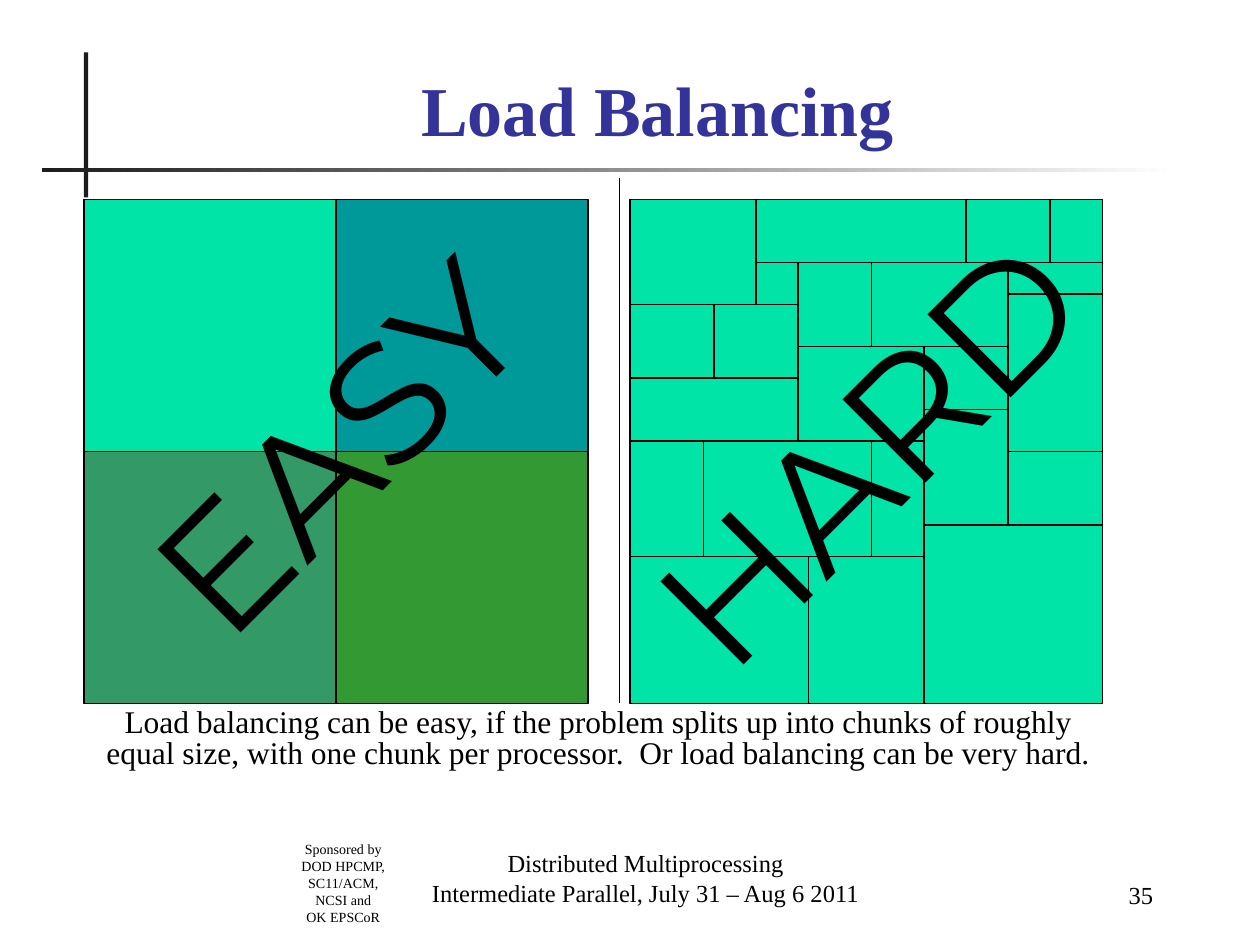
from lxml import etree
from pptx import Presentation
from pptx import util as u
from pptx.dml.color import RGBColor
from pptx.enum import shapes, text
from pptx.oxml.ns import qn

# All lengths are in cells of a grid with 12 cells to the inch.
COLUMNS, ROWS = 120, 90
CELL = u.Inches(1) / 12

COLORS = {
    "black": "000000", "white": "FFFFFF", "rule": "1C1C1C", "title": "333399",
    "mint": "00E4A8", "teal": "009999", "sea": "339966", "green": "339933",
}
SERIF, SANS = "Times New Roman", "Montserrat"

TOP = 19  # row where both halves start
EASY_LEFT, EASY_SIZE = 8, 24
EASY_TILES = [["mint", "teal"], ["sea", "green"]]

HARD_LEFT = 60
HARD_TILES = [  # column, row, width, height
    (0, 0, 12, 10), (12, 0, 20, 6), (32, 0, 8, 6), (40, 0, 5, 6),
    (12, 6, 4, 4), (16, 6, 7, 8), (23, 6, 13, 8), (36, 6, 9, 3),
    (36, 9, 9, 15), (0, 10, 8, 7), (8, 10, 8, 7), (16, 14, 12, 9),
    (28, 14, 8, 6), (0, 17, 16, 6), (28, 20, 8, 11), (0, 23, 7, 11),
    (7, 23, 16, 11), (23, 23, 5, 11), (36, 24, 9, 7), (28, 31, 17, 17),
    (0, 34, 17, 14), (17, 34, 11, 14),
]
DIVIDER = (59, 17, 59, 67)
VERTICAL_RULE = (8, 5, 0.4, 13.8)
HORIZONTAL_RULE = (4, 16, 108, 0.4)

CENTER, RIGHT = text.PP_ALIGN.CENTER, text.PP_ALIGN.RIGHT
UPPER, LOWER = text.MSO_ANCHOR.TOP, text.MSO_ANCHOR.BOTTOM
TEXTS = [
    dict(box=(27.2, 79.5, 11, 9.2), size=8,
         lines=["Sponsored by DOD HPCMP, SC11/ACM, NCSI and", "OK EPSCoR"]),
    dict(box=(10, 6, 105.2, 8.9), size=40, color="title", bold=True,
         anchor=LOWER, lines=["Load Balancing"]),
    dict(box=(94, 81.2, 17, 6), size=14, align=RIGHT, anchor=LOWER, lines=["35"]),
    dict(box=(8, 67, 98, 12.7), size=18, spacing=0.8, lines=[
        "Load balancing can be easy, if the problem splits up into chunks of "
        "roughly equal size, with one chunk per processor.  Or load balancing "
        "can be very hard."]),
    dict(box=(6, 32, 52, 20.4), size=96, font=SANS, rotation=315, lines=["EASY"]),
    dict(box=(55.8, 32.5, 53.3, 20.4), size=96, font=SANS, rotation=315,
         lines=["HARD"]),
    dict(box=(37, 81, 49, 6), size=14, anchor=LOWER,
         lines=["Distributed Multiprocessing",
                "Intermediate Parallel, July 31 – Aug 6 2011"]),
]


def cells(*counts):
    return [round(count * CELL) for count in counts]


def rgb(name):
    return RGBColor.from_string(COLORS[name])


def add_rectangle(slide, box, color, outlined=True):
    shape = slide.shapes.add_shape(shapes.MSO_SHAPE.RECTANGLE, *cells(*box))
    shape.shadow.inherit = False
    shape.fill.solid()
    shape.fill.fore_color.rgb = rgb(color)
    if outlined:
        shape.line.color.rgb = rgb("black")
        shape.line.width = u.Pt(0.75)
    else:
        shape.line.fill.background()
    return shape


def add_rules(slide):
    """Draw the crossed bars behind the title; the long one fades out."""
    add_rectangle(slide, VERTICAL_RULE, "rule", outlined=False)
    fading = add_rectangle(slide, HORIZONTAL_RULE, "rule", outlined=False)
    fading.fill.gradient()
    fading.fill.gradient_angle = 0
    for stop, color in zip(fading.fill.gradient_stops, ("rule", "white")):
        stop.color.rgb = rgb(color)


def add_divider(slide):
    line = slide.shapes.add_connector(shapes.MSO_CONNECTOR.STRAIGHT, *cells(*DIVIDER))
    line.line.color.rgb = rgb("black")
    line.line.width = u.Pt(0.75)
    etree.SubElement(line._element.spPr, qn("a:effectLst"))


def add_text(slide, box, lines, size, font=SERIF, color="black", bold=False,
             align=CENTER, anchor=UPPER, spacing=None, rotation=0):
    shape = slide.shapes.add_textbox(*cells(*box))
    shape.rotation = rotation
    frame = shape.text_frame
    frame.word_wrap = True
    frame.vertical_anchor = anchor
    frame.text = "\n".join(lines)
    for paragraph in frame.paragraphs:
        paragraph.alignment = align
        paragraph.line_spacing = spacing
        paragraph.font.name = font
        paragraph.font.size = u.Pt(size)
        paragraph.font.bold = bold
        paragraph.font.color.rgb = rgb(color)


def main():
    presentation = Presentation()
    presentation.slide_width, presentation.slide_height = cells(COLUMNS, ROWS)
    slide = presentation.slides.add_slide(presentation.slide_layouts[6])

    add_rules(slide)
    for row, colors in enumerate(EASY_TILES):
        for column, color in enumerate(colors):
            add_rectangle(slide, (EASY_LEFT + column * EASY_SIZE,
                                  TOP + row * EASY_SIZE, EASY_SIZE, EASY_SIZE), color)
    for column, row, width, height in HARD_TILES:
        add_rectangle(slide, (HARD_LEFT + column, TOP + row, width, height), "mint")
    add_divider(slide)
    for item in TEXTS:
        add_text(slide, **item)

    presentation.save("out.pptx")


if __name__ == "__main__":
    main()
